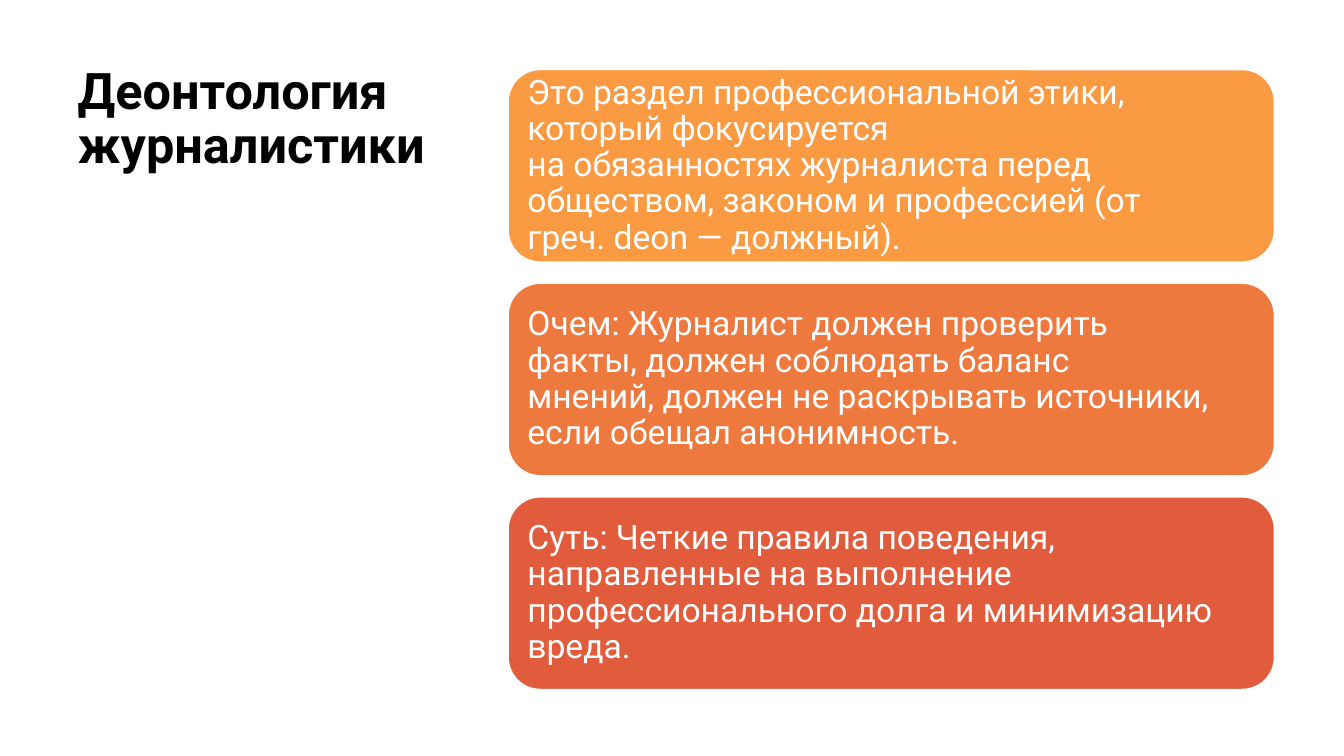
from pptx import Presentation
from pptx.dml.color import RGBColor
from pptx.enum.shapes import MSO_SHAPE as SHAPE
from pptx.enum.text import MSO_ANCHOR as ANCHOR, MSO_AUTO_SIZE as AUTO, PP_ALIGN as ALIGN
from pptx.util import Inches, Pt

# "~" stands for a no-break space
TITLE = "Деонтология журналистики"
CARDS = [
    ("orange", "Это раздел профессиональной этики, который фокусируется "
               "на~обязанностях~журналиста перед обществом, законом и профессией "
               "(от греч.~deon~— должный).~"),
    ("coral", "Очем:~Журналист~должен~проверить факты,~должен~соблюдать баланс "
              "мнений,~должен~не раскрывать источники, если обещал анонимность."),
    ("red", "Суть:~Четкие правила поведения, направленные на выполнение "
            "профессионального долга и минимизацию вреда.~"),
]
COLORS = {"orange": "FA9A42", "coral": "EE793F", "red": "E15C3D",
          "white": "FFFFFF", "black": "000000"}
FONT = "Roboto"
NBSP = chr(160)

SLIDE_W, SLIDE_H = 13.33, 7.5
TITLE_BOX = (0.67, 0.6, 3.82, 6.33)
CARD_LEFT, CARD_TOP, CARD_W, CARD_H = 5.04, 0.69, 7.6, 1.91
CARD_STEP = CARD_H + 0.21


def color(name):
    return RGBColor.from_string(COLORS[name])


def write(shape, text, size, fill, bold=False, anchor=ANCHOR.TOP, inset_y=0.05):
    tf = shape.text_frame
    tf.word_wrap = True
    tf.auto_size = AUTO.NONE
    tf.vertical_anchor = anchor
    tf.margin_left = tf.margin_right = Inches(0.1)
    tf.margin_top = tf.margin_bottom = Inches(inset_y)
    p = tf.paragraphs[0]
    p.alignment = ALIGN.LEFT
    p.line_spacing = 0.9
    r = p.add_run()
    r.text = text.replace("~", NBSP)
    r.font.name = FONT
    r.font.size = Pt(size)
    r.font.bold = bold
    r.font.color.rgb = color(fill)


prs = Presentation()
prs.slide_width, prs.slide_height = Inches(SLIDE_W), Inches(SLIDE_H)
s = prs.slides.add_slide(prs.slide_layouts[5])

title = s.shapes.title
title.left, title.top, title.width, title.height = map(Inches, TITLE_BOX)
write(title, TITLE, 36, "black", bold=True)

for row, (fill, text) in enumerate(CARDS):
    top = CARD_TOP + row * CARD_STEP
    card = s.shapes.add_shape(SHAPE.ROUNDED_RECTANGLE,
                              *map(Inches, (CARD_LEFT, top, CARD_W, CARD_H)))
    card.shadow.inherit = False
    card.fill.solid()
    card.fill.fore_color.rgb = color(fill)
    card.line.color.rgb = color("white")
    card.line.width = Pt(1)
    write(card, text, 24, "white", anchor=ANCHOR.MIDDLE, inset_y=0.1)

prs.save("out.pptx")
